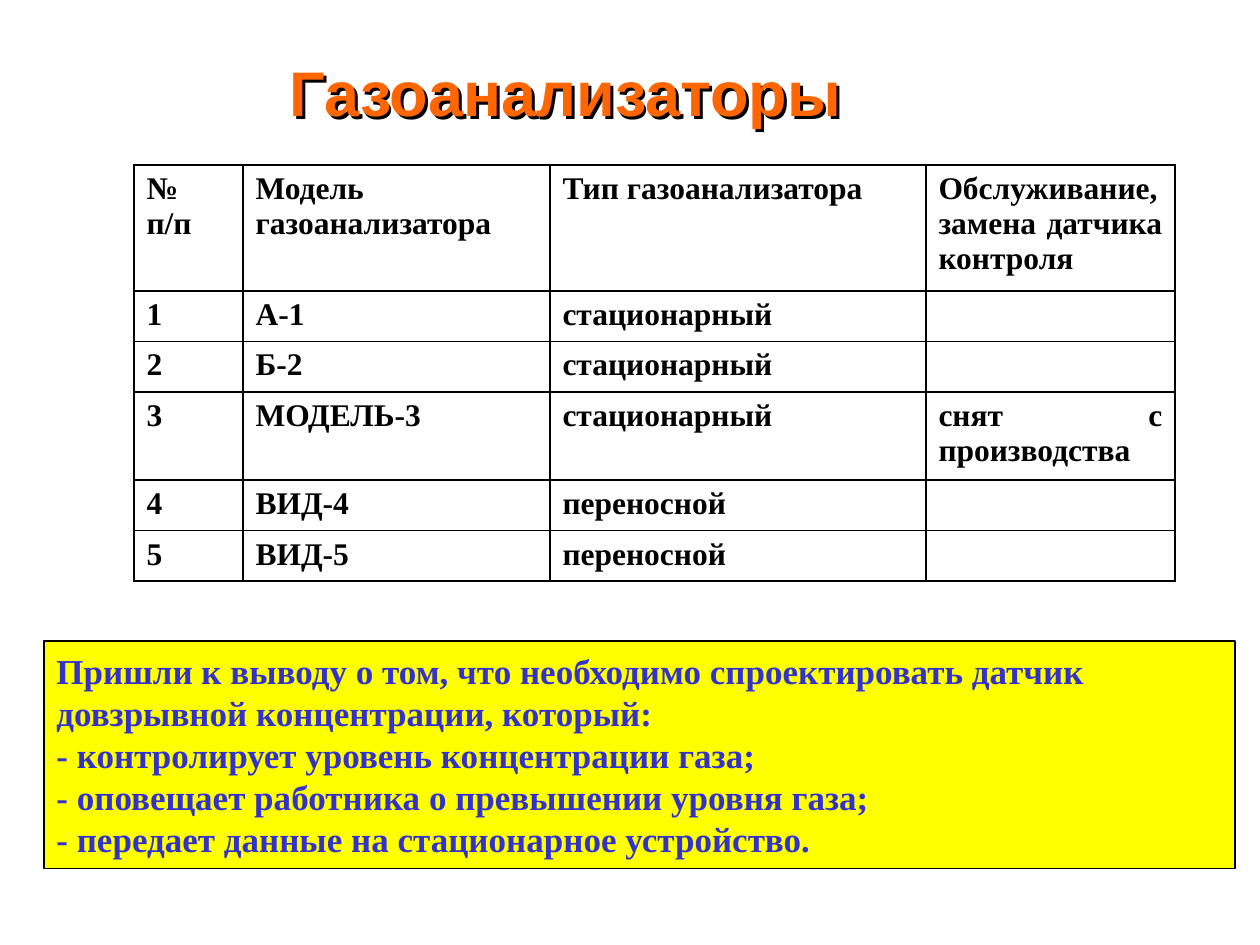
import pptx
import pptx.util
import pptx.dml.color
import pptx.enum.shapes
import pptx.enum.text
import pptx.oxml
import pptx.oxml.ns
import lxml.etree

PX = 914400 // 126
RGB = pptx.dml.color.RGBColor
ORANGE = RGB(0xFF, 0x66, 0x00)
BLACK = RGB(0, 0, 0)
WHITE = RGB(0xFF, 0xFF, 0xFF)
YELLOW = RGB(0xFF, 0xFF, 0x00)
BLUE = RGB(0x33, 0x33, 0xCC)
ALIGN = pptx.enum.text.PP_ALIGN
MIDDLE = pptx.enum.text.MSO_ANCHOR.MIDDLE
A_NS = pptx.oxml.ns.nsdecls("a")

COLS = [109, 307, 376, 249]
ROWS = [117, 48, 48, 82, 47, 47]
CELLS = [
    ["№ п/п", "Модель газоанализатора", "Тип газоанализатора",
     "Обслуживание, замена датчика контроля"],
    ["1", "А-1", "стационарный", ""],
    ["2", "Б-2", "стационарный", ""],
    ["3", "МОДЕЛЬ-3", "стационарный", "снят с производства"],
    ["4", "ВИД-4", "переносной", ""],
    ["5", "ВИД-5", "переносной", ""],
]
NOTES = [
    "Пришли к выводу о том, что необходимо спроектировать датчик",
    "довзрывной концентрации, который:",
    "- контролирует уровень концентрации газа;",
    "- оповещает работника о превышении уровня газа;",
    "- передает данные на стационарное устройство.",
]


def scale(box):
    return [n * PX for n in box]


def write(frame, *lines, size=18, color=BLACK, face="Times New Roman",
          align=ALIGN.JUSTIFY):
    """Fill a text frame with one bold paragraph per line."""
    frame.word_wrap = True
    for i, line in enumerate(lines):
        para = frame.add_paragraph() if i else frame.paragraphs[0]
        para.alignment = align
        font = para.font
        if line:
            run = para.add_run()
            run.text = line
            font = run.font
        font.size = pptx.util.Pt(size)
        font.name = face
        font.bold = True
        font.color.rgb = color


def title(slide, box):
    shape = slide.shapes.add_textbox(*scale(box))
    shape.text_frame.vertical_anchor = MIDDLE
    write(shape.text_frame, "Газоанализаторы", size=36, color=ORANGE,
          face="Arial", align=ALIGN.CENTER)
    # Hard black shadow down and to the right
    shape.element.spPr.append(pptx.oxml.parse_xml(
        f'<a:effectLst {A_NS}><a:outerShdw dist="{4 * PX}" dir="2700000">'
        f'<a:srgbClr val="{BLACK}"/></a:outerShdw></a:effectLst>'))


def frame_cell(cell):
    """Draw a thin black line on every side of a cell."""
    props = cell._tc.get_or_add_tcPr()
    for i, side in enumerate(("lnL", "lnR", "lnT", "lnB")):
        props.insert(i, pptx.oxml.parse_xml(
            f'<a:{side} {A_NS} w="12700"><a:solidFill>'
            f'<a:srgbClr val="{BLACK}"/></a:solidFill></a:{side}>'))


def models(slide, box):
    table = slide.shapes.add_table(len(ROWS), len(COLS), *scale(box)).table
    for col, width in zip(table.columns, COLS):
        col.width = width * PX
    for row, high, texts in zip(table.rows, ROWS, CELLS):
        row.height = high * PX
        for cell, text in zip(row.cells, texts):
            cell.fill.solid()
            cell.fill.fore_color.rgb = WHITE
            frame_cell(cell)
            write(cell.text_frame, text)


def result(slide, box):
    kind = pptx.enum.shapes.MSO_SHAPE.RECTANGLE
    shape = slide.shapes.add_shape(kind, *scale(box))
    shape.shadow.inherit = False
    shape.fill.solid()
    shape.fill.fore_color.rgb = YELLOW
    shape.line.color.rgb = BLACK
    shape.line.width = pptx.util.Pt(0.75)
    shape.text_frame.vertical_anchor = MIDDLE
    write(shape.text_frame, *NOTES, size=20, color=BLUE)


def main():
    deck = pptx.Presentation()
    deck.slide_width = pptx.util.Inches(10)
    deck.slide_height = pptx.util.Inches(7.5)
    slide = deck.slides.add_slide(deck.slide_layouts[6])
    title(slide, (74, 35, 983, 112))
    models(slide, (134, 165, sum(COLS), sum(ROWS)))
    result(slide, (44, 641, 1191, 228))
    deck.save("out.pptx")


if __name__ == "__main__":
    main()
